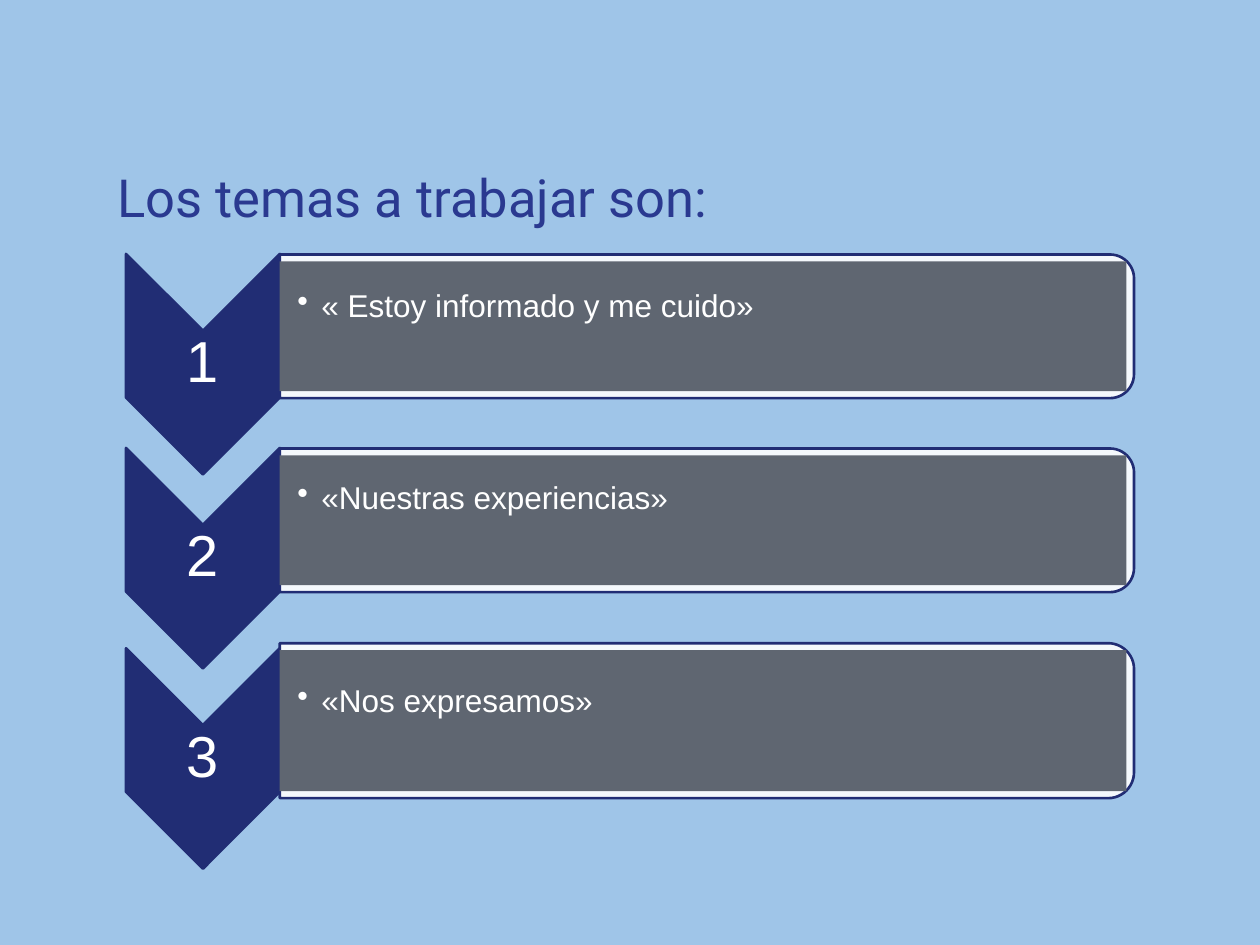
from dataclasses import dataclass

from lxml.etree import SubElement
from pptx import Presentation
from pptx.dml.color import RGBColor
from pptx.enum.shapes import MSO_SHAPE
from pptx.enum.text import MSO_ANCHOR, PP_ALIGN
from pptx.oxml.ns import qn
from pptx.shapes.autoshape import Shape
from pptx.shapes.shapetree import GroupShapes
from pptx.util import Inches, Pt

SKY = RGBColor(0x9F, 0xC5, 0xE8)
INDIGO = RGBColor(0x2A, 0x39, 0x90)
NAVY = RGBColor(0x21, 0x2D, 0x74)
SLATE = RGBColor(0x5F, 0x66, 0x71)
WHITE = RGBColor(0xFF, 0xFF, 0xFF)

CHEVRON_X, PANEL_X = 1.61, 5.61
CHEVRON_DROP = 0.3
FRAME_MARGIN = 0.11


@dataclass
class Topic:
    number: str
    text: str
    center_y: float
    height: float
    bottom_inset: float


TOPICS = [
    Topic("1", "« Estoy informado y me cuido»", 2.59, 1.14, 0.31),
    Topic("2", "«Nuestras experiencias»", 4.13, 1.14, 0.35),
    Topic("3", "«Nos expresamos»", 5.72, 1.23, 0.31),
]


def set_format(target: object, values: dict) -> None:
    for name, value in values.items():
        setattr(target, name, value)


def set_frame(sp: Shape, insets: tuple, anchor: MSO_ANCHOR) -> None:
    names = ("margin_left", "margin_top", "margin_right", "margin_bottom")
    values = dict(zip(names, map(Inches, insets)))
    set_format(sp.text_frame, {**values, "word_wrap": True, "vertical_anchor": anchor})


def write(sp: Shape, text: str, font: str, size: float, color: RGBColor,
          align: PP_ALIGN, spacing: float) -> None:
    p = sp.text_frame.paragraphs[0]
    set_format(p, {"alignment": align, "line_spacing": spacing})
    r = p.add_run()
    r.text = text
    set_format(r.font, {"name": font, "size": Pt(size), "bold": False})
    r.font.color.rgb = color


def add_centered(shapes: GroupShapes, kind: MSO_SHAPE, cx: float, cy: float,
                 width: float, height: float, fill: RGBColor, rotation: int = 0,
                 outlined: bool = False) -> Shape:
    sp = shapes.add_shape(kind, Inches(cx - width / 2), Inches(cy - height / 2),
                          Inches(width), Inches(height))
    sp.rotation = rotation
    sp.shadow.inherit = False
    sp.fill.solid()
    sp.fill.fore_color.rgb = fill
    if outlined:
        sp.line.color.rgb = NAVY
        sp.line.width = Pt(1.5)
    else:
        sp.line.fill.background()
    return sp


def add_bullet(sp: Shape) -> None:
    pPr = sp.text_frame.paragraphs[0]._p.get_or_add_pPr()
    pPr.set("marL", str(Inches(0.19)))
    pPr.set("indent", str(Inches(-0.19)))
    SubElement(SubElement(pPr, qn("a:buClr")), qn("a:srgbClr"), val=str(WHITE))
    SubElement(pPr, qn("a:buChar"), char="•")


def add_topic(shapes: GroupShapes, topic: Topic) -> None:
    chevron_y = topic.center_y + CHEVRON_DROP
    add_centered(shapes, MSO_SHAPE.CHEVRON, CHEVRON_X, chevron_y, 1.75, 1.22,
                 NAVY, 90, True)

    number = shapes.add_textbox(Inches(CHEVRON_X - 0.61), Inches(chevron_y - 0.26),
                                Inches(1.22), Inches(0.52))
    set_frame(number, (0.02, 0.02, 0.02, 0.02), MSO_ANCHOR.MIDDLE)
    write(number, topic.number, "Arial", 33, WHITE, PP_ALIGN.CENTER, 0.9)

    frame = add_centered(shapes, MSO_SHAPE.ROUND_2_SAME_RECTANGLE, PANEL_X,
                         topic.center_y, topic.height, 6.78, WHITE, 90, True)
    frame.adjustments[0] = 0.167
    frame.adjustments[1] = 0
    color = frame.fill._xPr.find(qn("a:solidFill"))[0]
    SubElement(color, qn("a:alpha"), val="89000")

    panel = add_centered(shapes, MSO_SHAPE.RECTANGLE, PANEL_X - 0.03, topic.center_y,
                         6.72, topic.height - FRAME_MARGIN, SLATE)
    set_frame(panel, (0.14, 0.01, 0.01, topic.bottom_inset), MSO_ANCHOR.MIDDLE)
    write(panel, topic.text, "Arial", 18, WHITE, PP_ALIGN.LEFT, 0.9)
    add_bullet(panel)


def main() -> None:
    prs = Presentation()
    set_format(prs, {"slide_width": Inches(10), "slide_height": Inches(7.5)})
    s = prs.slides.add_slide(prs.slide_layouts[5])
    s.background.fill.solid()
    s.background.fill.fore_color.rgb = SKY

    title = s.shapes.title
    set_format(title, {"left": Inches(0.83), "top": Inches(0.6),
                       "width": Inches(8), "height": Inches(1.26)})
    set_frame(title, (0.1, 0.05, 0.1, 0.05), MSO_ANCHOR.BOTTOM)
    write(title, "Los temas a trabajar son:", "Roboto", 30, INDIGO, PP_ALIGN.LEFT, 1.0)

    group = s.shapes.add_group_shape()
    for topic in TOPICS:
        add_topic(group.shapes, topic)
    prs.save("out.pptx")


if __name__ == "__main__":
    main()
